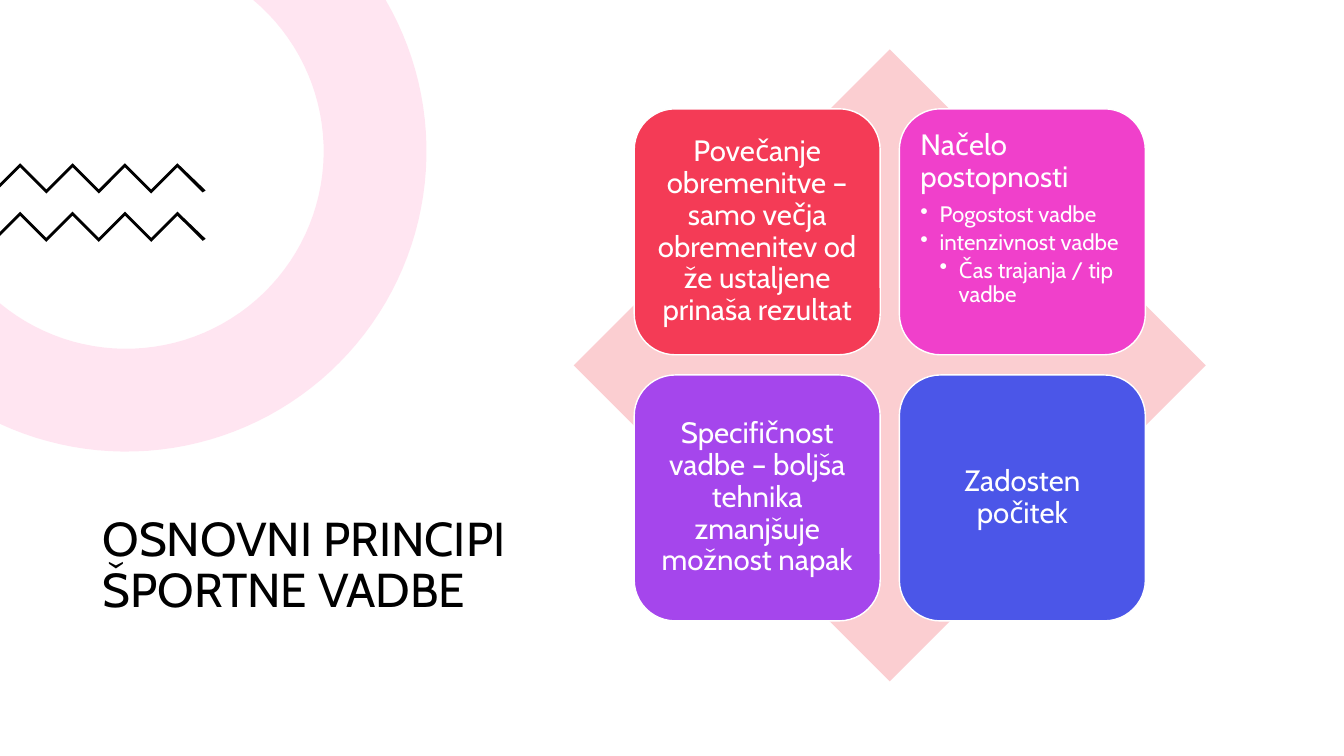
import math
from dataclasses import dataclass

import pptx
import pptx.util
from lxml import etree
from pptx.dml.color import RGBColor
from pptx.enum.shapes import MSO_SHAPE
from pptx.enum.text import MSO_ANCHOR, PP_ALIGN
from pptx.oxml.ns import qn
from pptx.util import Inches


@dataclass(frozen=True)
class Theme:
    font: str = "Cabin"
    black: str = "000000"
    white: str = "FFFFFF"
    ring: str = "FF80BD"
    diamond: str = "FBCED1"
    red: str = "F43B56"
    pink: str = "F040CB"
    purple: str = "A546EC"
    blue: str = "4B56E8"
    title_size: int = 34
    card_size: int = 21
    bullet_size: int = 16


THEME = Theme()

CARD_SIZE = 2.44
CARD_PITCH_X, CARD_PITCH_Y = 2.63, 2.64
CARDS_LEFT, CARDS_TOP = 6.29, 1.08
BULLET_INDENT = 0.19

# Cards in reading order: colour, heading, bullets as (level, text)
CARDS = [
    (THEME.red, "Povečanje obremenitve – samo večja obremenitev od že ustaljene prinaša rezultat", []),
    (THEME.pink, "Načelo postopnosti",
     [(1, "Pogostost vadbe"), (1, "intenzivnost vadbe"), (2, "Čas trajanja / tip vadbe")]),
    (THEME.purple, "Specifičnost vadbe – boljša tehnika zmanjšuje možnost napak", []),
    (THEME.blue, "Zadosten počitek", []),
]


def paint(shape, color):
    shape.shadow.inherit = False
    shape.fill.solid()
    shape.fill.fore_color.rgb = RGBColor.from_string(color)
    shape.line.fill.background()


def add_outline(slide, points, color):
    """Closed filled outline through points given in inches."""
    corners = [(Inches(x), Inches(y)) for x, y in points]
    builder = slide.shapes.build_freeform(*corners[0], scale=1.0)
    builder.add_line_segments(corners[1:], close=True)
    outline = builder.convert_to_shape()
    paint(outline, color)
    return outline


def arc(center_x, center_y, radius, start, end, steps=60):
    angles = [start + (end - start) * i / steps for i in range(steps + 1)]
    return [(center_x + radius * math.cos(a), center_y + radius * math.sin(a)) for a in angles]


def add_ring(slide, center_x, center_y, outer, inner):
    """Ring cut off by the top and left slide edges."""
    def edge_angles(radius):
        return -math.asin(center_y / radius), math.acos(-center_x / radius)

    top_outer, left_outer = edge_angles(outer)
    top_inner, left_inner = edge_angles(inner)
    points = (arc(center_x, center_y, outer, top_outer, left_outer)
              + arc(center_x, center_y, inner, left_inner, top_inner))
    ring = add_outline(slide, points, THEME.ring)
    color = ring.fill._xPr.find(qn("a:solidFill"))[0]
    etree.SubElement(color, qn("a:alpha")).set("val", "20000")


def add_zigzag(slide, top):
    step, thickness = 0.26, 0.04
    bends = [(0.2 + step * i, top + step * (i % 2)) for i in range(7)]
    upper = [(0, top + 0.2)] + bends + [(2.04, top + 0.27)]
    lower = [(2.01, top + 0.29)] + [(x, y + thickness) for x, y in reversed(bends)]
    add_outline(slide, upper + lower + [(0, top + 0.24)], THEME.black)


def style_paragraph(paragraph, text, size, color, space_after=0):
    paragraph.text = text
    paragraph.line_spacing = 0.9
    paragraph.space_after = pptx.util.Pt(space_after)
    paragraph.font.name = THEME.font
    paragraph.font.size = pptx.util.Pt(size)
    paragraph.font.color.rgb = RGBColor.from_string(color)


def add_bullet(paragraph, level):
    paragraph.level = level
    properties = paragraph._p.get_or_add_pPr()
    properties.set("marL", str(Inches(BULLET_INDENT * level)))
    properties.set("indent", str(-Inches(BULLET_INDENT)))
    bullet = etree.Element(qn("a:buChar"), char="•")
    properties.find(qn("a:defRPr")).addprevious(bullet)


def add_title(slide, text):
    title = slide.shapes.add_textbox(Inches(0.92), Inches(4.48), Inches(5.27), Inches(2.28))
    frame = title.text_frame
    frame.word_wrap = True
    frame.vertical_anchor = MSO_ANCHOR.MIDDLE
    style_paragraph(frame.paragraphs[0], text, THEME.title_size, THEME.black)


def add_diamond(slide):
    diamond = slide.shapes.add_shape(
        MSO_SHAPE.DIAMOND, Inches(5.69), Inches(0.49), Inches(6.27), Inches(6.27))
    paint(diamond, THEME.diamond)


def add_card(slide, left, top, color, heading, bullets):
    card = slide.shapes.add_shape(
        MSO_SHAPE.ROUNDED_RECTANGLE, Inches(left), Inches(top), Inches(CARD_SIZE), Inches(CARD_SIZE))
    paint(card, color)
    card.line.color.rgb = RGBColor.from_string(THEME.white)
    card.line.width = pptx.util.Pt(1)

    frame = card.text_frame
    frame.word_wrap = True
    frame.margin_left = frame.margin_right = Inches(0.09)
    frame.margin_top = frame.margin_bottom = Inches(0.09)
    frame.vertical_anchor = MSO_ANCHOR.TOP if bullets else MSO_ANCHOR.MIDDLE
    first = frame.paragraphs[0]
    style_paragraph(first, heading, THEME.card_size, THEME.white, 0.35 * THEME.card_size)
    first.alignment = PP_ALIGN.LEFT if bullets else PP_ALIGN.CENTER
    for level, text in bullets:
        item = frame.add_paragraph()
        style_paragraph(item, text, THEME.bullet_size, THEME.white, 0.15 * THEME.bullet_size)
        item.alignment = PP_ALIGN.LEFT
        add_bullet(item, level)


def main():
    deck = pptx.Presentation()
    deck.slide_width, deck.slide_height = Inches(13.33), Inches(7.5)
    slide = deck.slides.add_slide(deck.slide_layouts[6])

    # Decoration and title
    add_ring(slide, 1.25, 1.5, outer=2.98, inner=1.96)
    add_title(slide, "OSNOVNI PRINCIPI ŠPORTNE VADBE")
    for top in (1.62, 2.1):
        add_zigzag(slide, top)

    # Matrix of four principles
    add_diamond(slide)
    for index, (color, heading, bullets) in enumerate(CARDS):
        row, column = divmod(index, 2)
        add_card(slide, CARDS_LEFT + column * CARD_PITCH_X, CARDS_TOP + row * CARD_PITCH_Y,
                 color, heading, bullets)

    deck.save("out.pptx")


if __name__ == "__main__":
    main()
